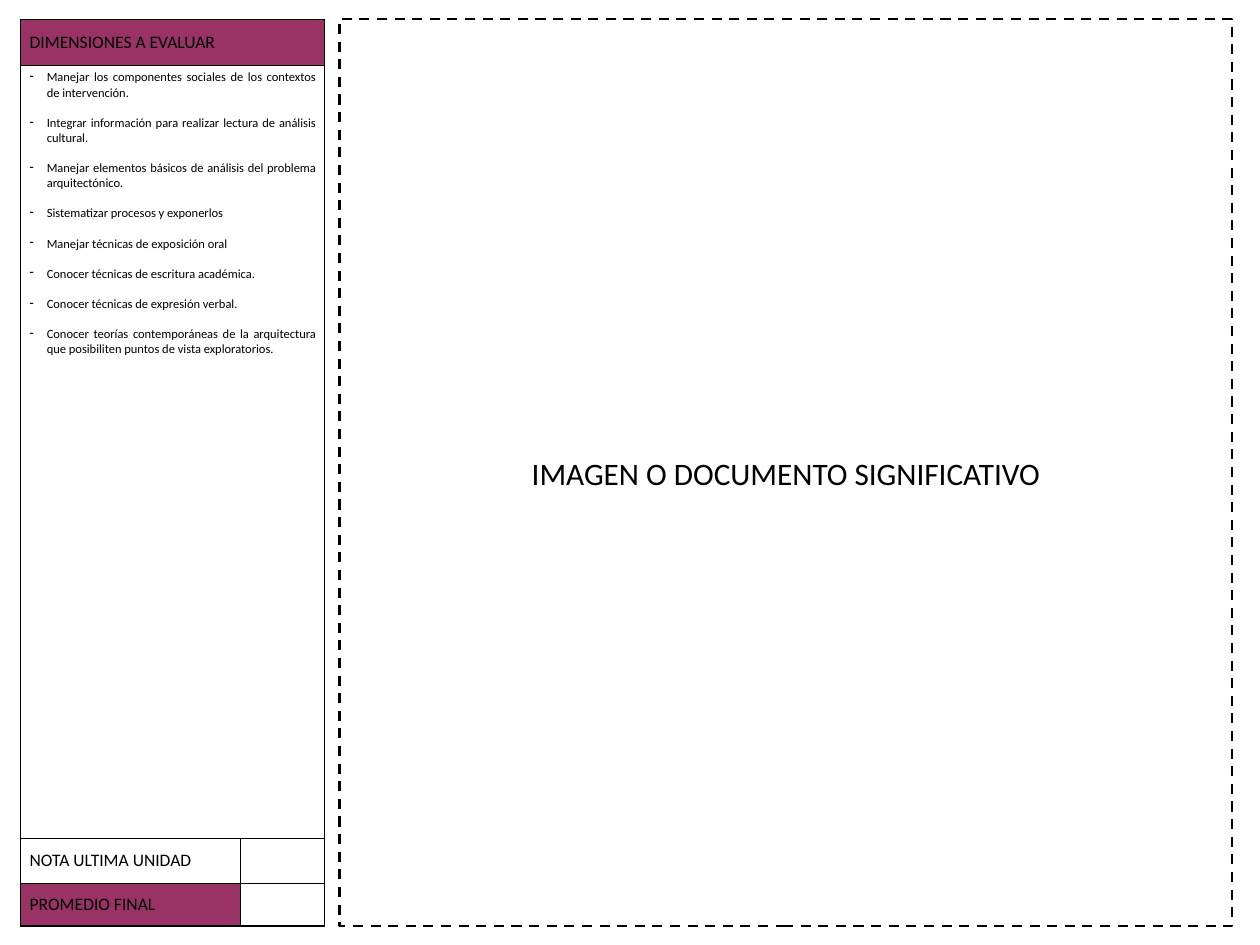
import pptx
import pptx.util
import pptx.dml.color
import pptx.enum.dml
import pptx.enum.shapes
import pptx.enum.text
import pptx.oxml
import pptx.oxml.ns

Pt = pptx.util.Pt
Align = pptx.enum.text.PP_ALIGN
Anchor = pptx.enum.text.MSO_ANCHOR
hues = {"plum": "993366", "white": "FFFFFF", "black": "000000"}
tint = {name: pptx.dml.color.RGBColor.from_string(code) for name, code in hues.items()}

deck = pptx.Presentation()
deck.slide_width = pptx.util.Inches(14)
deck.slide_height = pptx.util.Inches(10.5)
slide = deck.slides.add_slide(deck.slide_layouts[6])

# Grid: 1400 columns by 1050 rows of square units
unit = deck.slide_width // 1400
top, tall = 21 * unit, 1008 * unit


def style(para, size, align):
    para.alignment = align
    for run in para.runs:
        run.font.name = "Calibri"
        run.font.size = Pt(size)
        run.font.color.rgb = tint["black"]


def edge(cell, widths):
    props = cell._tc.get_or_add_tcPr()
    for spot, (side, width) in enumerate(zip("LRTB", widths)):
        props.insert(spot, pptx.oxml.parse_xml(
            f'<a:ln{side} {pptx.oxml.ns.nsdecls("a")} w="{Pt(width)}"><a:solidFill>'
            f'<a:srgbClr val="{hues["black"]}"/></a:solidFill></a:ln{side}>'))


# Assessment table
cols, rows = [244, 94], [52, 859, 49, 48]
frame = slide.shapes.add_table(len(rows), len(cols), 23 * unit, top, sum(cols) * unit, tall)
table = frame.table
table.first_row = table.horz_banding = False
for col, width in zip(table.columns, cols):
    col.width = width * unit
for row, height in zip(table.rows, rows):
    row.height = height * unit

# Borders as left, right, top, bottom
rims = [
    [(1, 1, 0.5, 1)] * 2,
    [(1, 1, 1, 1)] * 2,
    [(1, 0.5, 1, 0.5), (0.5, 1, 1, 0.5)],
    [(1, 0.5, 0.5, 1), (0.5, 1, 0.5, 1)],
]
for r, line in enumerate(rims):
    for c, widths in enumerate(line):
        cell = table.cell(r, c)
        cell.fill.background()
        edge(cell, widths)
for r in (0, 1):
    table.cell(r, 0).merge(table.cell(r, 1))

# Headings
heads = [
    (0, "DIMENSIONES A EVALUAR", "plum"),
    (2, "NOTA ULTIMA UNIDAD", "white"),
    (3, "PROMEDIO FINAL", "plum"),
]
for r, text, hue in heads:
    cell = table.cell(r, 0)
    cell.text_frame.text = text
    cell.vertical_anchor = Anchor.MIDDLE
    cell.fill.solid()
    cell.fill.fore_color.rgb = tint[hue]
    style(cell.text_frame.paragraphs[0], 14, Align.JUSTIFY)

# Dimensions list
goals = [
    "Manejar los componentes sociales de los contextos de intervención.",
    "Integrar información para realizar lectura de análisis cultural.",
    "Manejar elementos básicos de análisis del problema arquitectónico.",
    "Sistematizar procesos y exponerlos",
    "Manejar técnicas de exposición oral",
    "Conocer técnicas de escritura académica.",
    "Conocer técnicas de expresión verbal.",
    "Conocer teorías contemporáneas de la arquitectura que posibiliten puntos de vista exploratorios.",
]
body = table.cell(1, 0).text_frame
body.text = "\n".join(goals)
for para in body.paragraphs:
    style(para, 10, Align.JUSTIFY)
    para.space_after = Pt(12)
    props = para._p.get_or_add_pPr()
    props.set("marL", str(19 * unit))
    props.set("indent", str(-19 * unit))
    props.append(pptx.oxml.parse_xml(f'<a:buChar {pptx.oxml.ns.nsdecls("a")} char="-"/>'))

# Dashed area for the main document
area = slide.shapes.add_shape(
    pptx.enum.shapes.MSO_SHAPE.RECTANGLE, 377 * unit, top, 992 * unit, tall)
area.shadow.inherit = False
area.fill.background()
area.line.color.rgb = tint["black"]
area.line.width = Pt(2)
area.line.dash_style = pptx.enum.dml.MSO_LINE.DASH
area.text_frame.text = "IMAGEN O DOCUMENTO SIGNIFICATIVO"
area.text_frame.word_wrap = True
area.text_frame.vertical_anchor = Anchor.MIDDLE
style(area.text_frame.paragraphs[0], 25, Align.CENTER)

deck.save("out.pptx")
